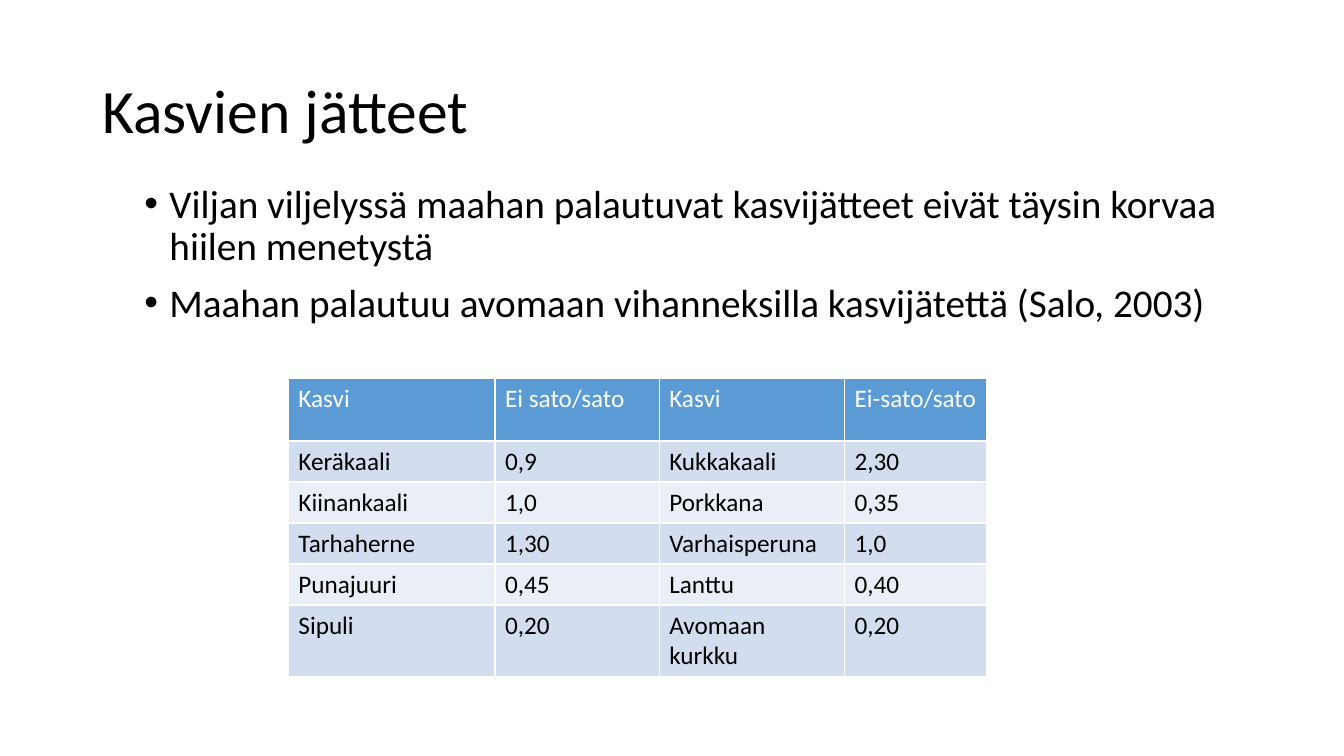
from lxml import etree
from pptx import Presentation
from pptx.dml.color import RGBColor
from pptx.enum.shapes import MSO_SHAPE
from pptx.enum.text import MSO_ANCHOR, PP_ALIGN
from pptx.oxml.ns import qn
from pptx.util import Pt

RECT, MIDDLE, LEFT = MSO_SHAPE.RECTANGLE, MSO_ANCHOR.MIDDLE, PP_ALIGN.LEFT

# Content
FONT = "Calibri"
BLACK, WHITE, BLUE = "000000", "FFFFFF", "5B9BD5"
BANDS = ("D2DEEF", "EAEFF7")
TITLE = "Kasvien jätteet"
POINTS = [
    "Viljan viljelyssä maahan palautuvat kasvijätteet eivät täysin korvaa hiilen menetystä",
    "Maahan palautuu avomaan vihanneksilla kasvijätettä (Salo, 2003)",
]
CROPS = [
    ("Kasvi", "Ei sato/sato", "Kasvi", "Ei-sato/sato"),
    ("Keräkaali", "0,9", "Kukkakaali", "2,30"),
    ("Kiinankaali", "1,0", "Porkkana", "0,35"),
    ("Tarhaherne", "1,30", "Varhaisperuna", "1,0"),
    ("Punajuuri", "0,45", "Lanttu", "0,40"),
    ("Sipuli", "0,20", "Avomaan kurkku", "0,20"),
]
COLS = (147.6, 117.3, 132.4, 101.7)
ROWS = (45, 29.3, 29.3, 29.3, 29.3, 50.9)


def color(code):
    return RGBColor.from_string(code)


def paint(fill, code):
    fill.solid()
    fill.fore_color.rgb = color(code)


def write(para, text, size, code):
    run = para.add_run()
    run.text = text
    run.font.name = FONT
    run.font.size = Pt(size)
    run.font.bold = False
    run.font.color.rgb = color(code)


def add_bullet(para, indent):
    props = para._p.get_or_add_pPr()
    props.set("marL", str(Pt(indent)))
    props.set("indent", str(-Pt(indent)))
    font = etree.SubElement(props, qn("a:buFont"))
    font.set("typeface", "Arial")
    etree.SubElement(props, qn("a:buChar")).set("char", "•")


def add_edges(cell):
    props = cell._tc.get_or_add_tcPr()
    for side in "LRTB":
        line = etree.SubElement(props, qn("a:ln" + side))
        line.set("w", str(Pt(1)))
        fill = etree.SubElement(line, qn("a:solidFill"))
        etree.SubElement(fill, qn("a:srgbClr")).set("val", WHITE)


deck = Presentation()
deck.slide_width, deck.slide_height = Pt(960), Pt(540)
slide = deck.slides.add_slide(deck.slide_layouts[6])

# Title
head = slide.shapes.add_shape(RECT, Pt(66), Pt(28.8), Pt(828), Pt(104.4))
head.shadow.inherit = False
paint(head.fill, WHITE)
head.line.fill.background()
head.text_frame.word_wrap = True
head.text_frame.vertical_anchor = MIDDLE
para = head.text_frame.paragraphs[0]
para.alignment = LEFT
para.line_spacing = 0.9
write(para, TITLE, 44, BLACK)

# Bullet points
body = slide.shapes.add_textbox(Pt(96), Pt(128.2), Pt(787), Pt(396.7))
frame = body.text_frame
frame.word_wrap = True
for i, text in enumerate(POINTS):
    para = frame.add_paragraph() if i else frame.paragraphs[0]
    add_bullet(para, 18)
    para.line_spacing = 0.9
    if i:
        para.space_before = Pt(10)
    write(para, text, 28, BLACK)

# Crop table
table = slide.shapes.add_table(
    len(ROWS), len(COLS), Pt(206), Pt(270), Pt(sum(COLS)), Pt(sum(ROWS))
).table
for col, width in zip(table.columns, COLS):
    col.width = Pt(width)
for r, (height, crop) in enumerate(zip(ROWS, CROPS)):
    table.rows[r].height = Pt(height)
    for c, text in enumerate(crop):
        cell = table.cell(r, c)
        add_edges(cell)
        paint(cell.fill, BANDS[(r - 1) % 2] if r else BLUE)
        write(cell.text_frame.paragraphs[0], text, 18, BLACK if r else WHITE)

deck.save("out.pptx")
